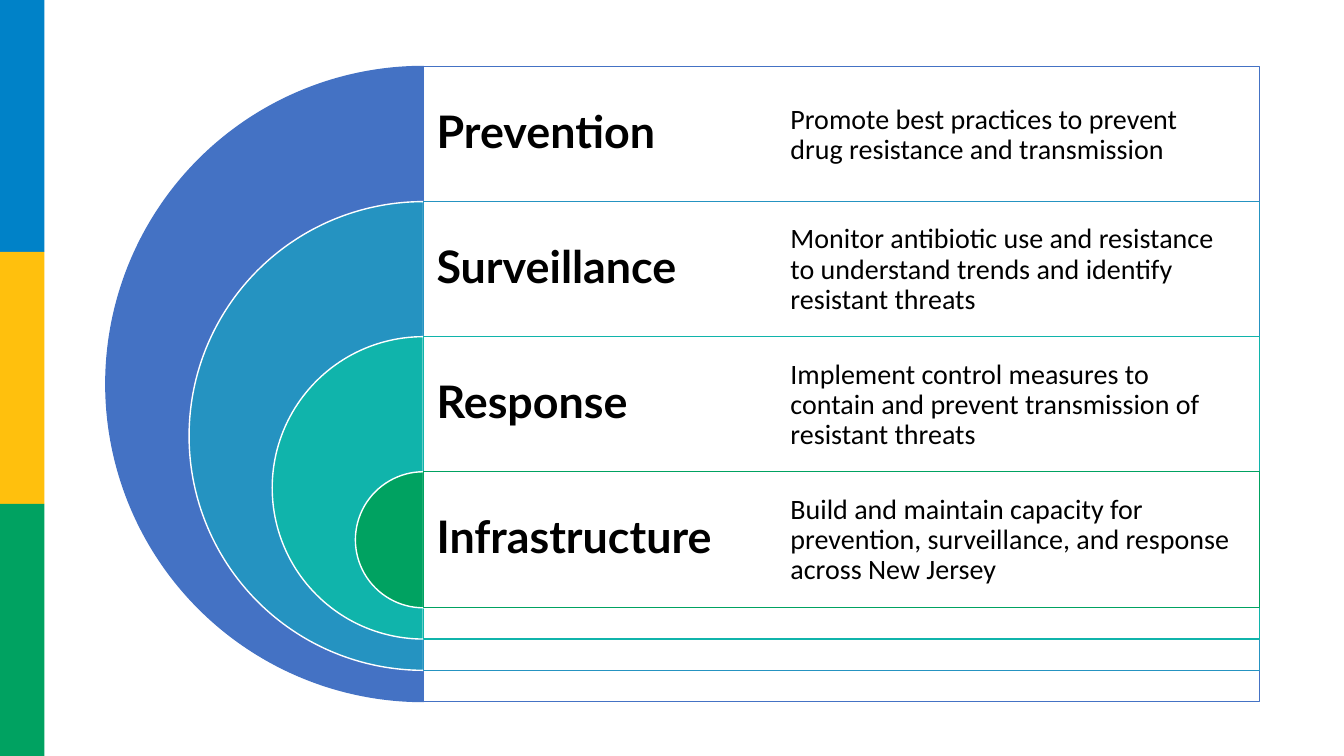
from lxml import etree
from pptx import Presentation
from pptx.dml.color import RGBColor
from pptx.enum.shapes import MSO_SHAPE as Shape
from pptx.enum.text import MSO_ANCHOR as Anchor
from pptx.oxml.ns import qn
from pptx.util import Inches, Pt

deck = Presentation()
deck.slide_width, deck.slide_height = Inches(13.33), Inches(7.5)
page = deck.slides.add_slide(deck.slide_layouts[6])


def add_shape(kind, left, top, width, height, fill, line=None):
    shape = page.shapes.add_shape(
        kind, Inches(left), Inches(top), Inches(width), Inches(height))
    shape.shadow.inherit = False
    shape.fill.solid()
    shape.fill.fore_color.rgb = RGBColor.from_string(fill)
    if line:
        shape.line.color.rgb = RGBColor.from_string(line)
        shape.line.width = Pt(1)
    else:
        shape.line.fill.background()
    return shape


def add_text(left, top, width, inset, text, font, size, bold):
    box = page.shapes.add_textbox(
        Inches(left), Inches(top), Inches(width), Inches(ROW_HEIGHT))
    frame = box.text_frame
    frame.word_wrap = True
    frame.vertical_anchor = Anchor.MIDDLE
    frame.margin_left = frame.margin_right = Inches(inset)
    frame.margin_top = frame.margin_bottom = Inches(inset)
    para = frame.paragraphs[0]
    para.line_spacing = 0.9
    span = para.add_run()
    span.text = text
    span.font.name, span.font.size, span.font.bold = font, Pt(size), bold
    span.font.color.rgb = RGBColor.from_string("000000")


# Coloured side bar
for index, color in enumerate(["0082C8", "FFC00D", "00A261"]):
    add_shape(Shape.RECTANGLE, 0, 2.5 * index, 0.44, 2.5, color)

# Nested half circles, each with a framed row to the right
ROW_HEIGHT = 1.34
FIRST_TOP = 0.66
CENTER_X = 4.2
rows = [
    ("Prevention", "4472C4", "4472C4",
     "Promote best practices to prevent drug resistance and transmission"),
    ("Surveillance", "2593C1", "FFFFFF",
     "Monitor antibiotic use and resistance to understand trends and identify resistant threats"),
    ("Response", "10B4AB", "FFFFFF",
     "Implement control measures to contain and prevent transmission of resistant threats"),
    ("Infrastructure", "00A261", "FFFFFF",
     "Build and maintain capacity for prevention, surveillance, and response across New Jersey"),
]
for index, (title, color, outline, description) in enumerate(rows):
    top = FIRST_TOP + ROW_HEIGHT * index
    diameter = 6.3 - 1.65 * index
    half_circle = add_shape(
        Shape.PIE, CENTER_X - diameter / 2, top, diameter, diameter, color, outline)
    # Angles of 90 and 270 degrees
    half_circle.adjustments[0] = 54
    half_circle.adjustments[1] = 162

    # Slightly transparent white frame
    frame_box = add_shape(
        Shape.RECTANGLE, CENTER_X, top, 8.29, diameter, "FFFFFF", color)
    fill_color = frame_box.fill._xPr.find(qn("a:solidFill"))[0]
    etree.SubElement(fill_color, qn("a:alpha"), val="90000")

    add_text(CENTER_X, top, 4.15, 0.13, title, "Lato", 32, True)
    add_text(7.57, top + 0.01, 4.93, 0.27, description, "Calibri", 20, False)

deck.save("out.pptx")
